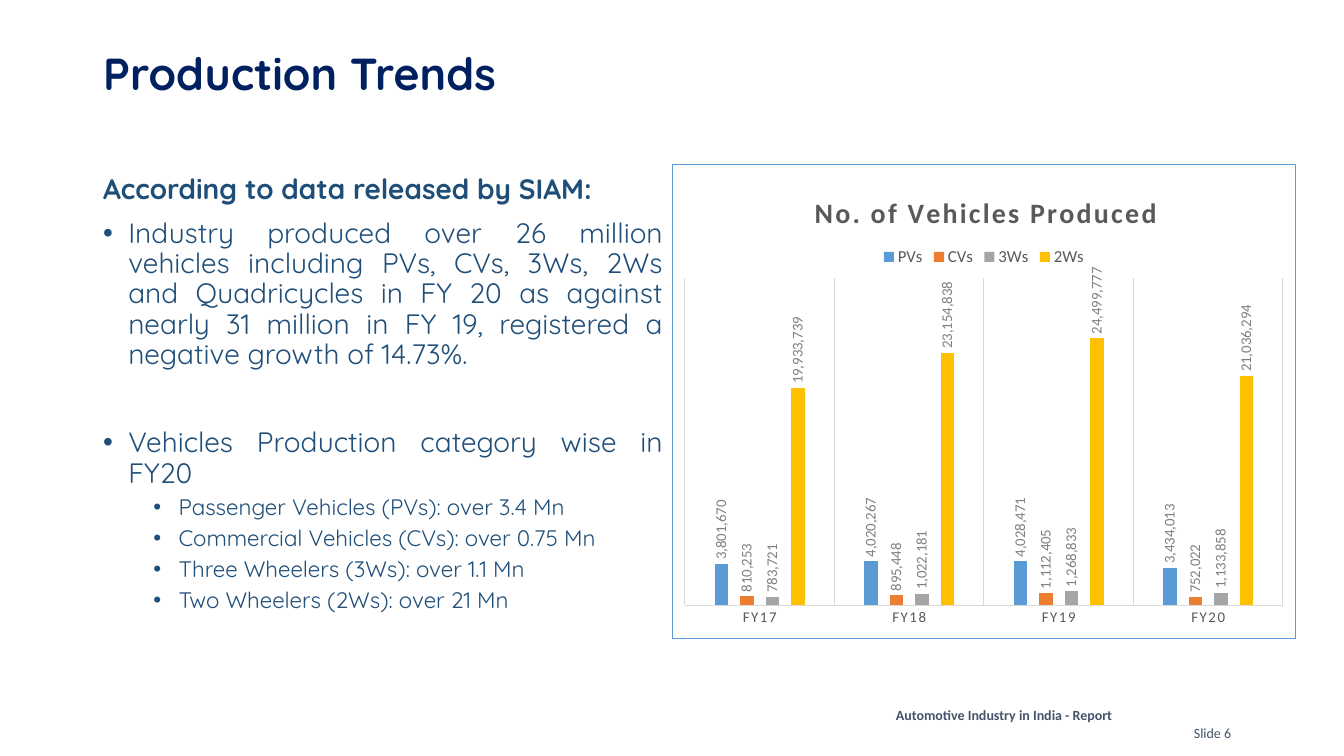
from dataclasses import dataclass

from lxml.etree import SubElement
from pptx import Presentation
from pptx.chart.data import CategoryChartData
from pptx.dml.color import RGBColor
from pptx.enum.chart import XL_CHART_TYPE as ChartType
from pptx.enum.chart import XL_LABEL_POSITION as LabelPosition
from pptx.enum.chart import XL_LEGEND_POSITION as LegendPosition
from pptx.enum.chart import XL_TICK_MARK as TickMark
from pptx.enum.text import MSO_ANCHOR as Anchor
from pptx.enum.text import MSO_AUTO_SIZE as AutoSize
from pptx.enum.text import PP_ALIGN as Align
from pptx.oxml import parse_xml
from pptx.oxml.ns import nsdecls, qn
from pptx.util import Emu, Inches, Pt

SCALE = 914400 / 100.8
NAVY, BLUE, SLATE = "002060", "1F4E79", "44546A"
GREY, LABEL_GREY, PALE, BORDER = "595959", "808080", "D9D9D9", "5B9BD5"


@dataclass(frozen=True)
class Area:
    left: int
    top: int
    width: int
    height: int


@dataclass(frozen=True)
class Item:
    text: str
    size: int = 20
    before: float = 10
    level: int = 0
    bullet: bool = True
    bold: bool = False


@dataclass(frozen=True)
class Series:
    name: str
    color: str
    values: tuple


@dataclass(frozen=True)
class Note:
    text: str
    area: Area
    align: Align
    bold: bool


CHART_AREA = Area(672, 164, 624, 475)
ITEMS = [
    Item("According to data released by SIAM:", before=0, bullet=False, bold=True),
    Item("Industry produced over 26 million vehicles including PVs, CVs, 3Ws, 2Ws "
         "and Quadricycles in FY 20 as against nearly 31 million in FY 19, "
         "registered a negative growth of 14.73%."),
    Item("Vehicles Production category wise in FY20", before=41.5),
    Item("Passenger Vehicles (PVs): over 3.4 Mn", 16, 5, 1),
    Item("Commercial Vehicles (CVs): over 0.75 Mn", 16, 5, 1),
    Item("Three Wheelers (3Ws): over 1.1 Mn", 16, 5, 1),
    Item("Two Wheelers (2Ws): over 21 Mn", 16, 5, 1),
]
YEARS = ["FY17", "FY18", "FY19", "FY20"]
SERIES = [
    Series("PVs", "5B9BD5", (3801670, 4020267, 4028471, 3434013)),
    Series("CVs", "ED7D31", (810253, 895448, 1112405, 752022)),
    Series("3Ws", "A5A5A5", (783721, 1022181, 1268833, 1133858)),
    Series("2Ws", "FFC000", (19933739, 23154838, 24499777, 21036294)),
]
NOTES = [
    Note("Automotive Industry in India - Report", Area(790, 702, 428, 27), Align.CENTER, True),
    Note("Slide 6", Area(1184, 720, 67, 27), Align.LEFT, False),
]


def px(length: float) -> Emu:
    return Emu(round(length * SCALE))


def rgb(color: str) -> RGBColor:
    return RGBColor.from_string(color)


def bounds(area: Area) -> tuple:
    return px(area.left), px(area.top), px(area.width), px(area.height)


def place(shape, area: Area) -> None:
    shape.left, shape.top, shape.width, shape.height = bounds(area)


def style(font, name: str, size: float, color: str, bold: bool = False) -> None:
    font.name, font.size, font.bold = name, Pt(size), bold
    font.color.rgb = rgb(color)


def add_run(para, text: str, name: str, size: float, color: str, bold: bool) -> None:
    span = para.add_run()
    span.text = text
    style(span.font, name, size, color, bold)


def add_title(slide) -> None:
    title = slide.shapes.title
    place(title, Area(93, 40, 1159, 73))
    frame = title.text_frame
    frame.auto_size, frame.vertical_anchor = AutoSize.NONE, Anchor.MIDDLE
    para = frame.paragraphs[0]
    para.alignment, para.line_spacing = Align.LEFT, 0.9
    add_run(para, "Production Trends", "Quicksand", 32, NAVY, True)


def set_bullet(para, item: Item) -> None:
    props = para._p.get_or_add_pPr()
    if not item.bullet:
        props.set("marL", "0")
        props.set("indent", "0")
        SubElement(props, qn("a:buNone"))
        return
    props.set("marL", str(Inches(0.25 + 0.5 * item.level)))
    props.set("indent", str(-Inches(0.25)))
    SubElement(SubElement(props, qn("a:buClr")), qn("a:srgbClr"), val=BLUE)
    SubElement(props, qn("a:buFont"), typeface="Arial")
    SubElement(props, qn("a:buChar"), char="•")


def add_body(slide) -> None:
    body = slide.placeholders[1]
    place(body, Area(93, 170, 580, 511))
    frame = body.text_frame
    frame.auto_size, frame.vertical_anchor = AutoSize.NONE, Anchor.TOP
    for index, item in enumerate(ITEMS):
        para = frame.add_paragraph() if index else frame.paragraphs[0]
        para.level = item.level
        para.alignment = Align.JUSTIFY if item.bullet else Align.LEFT
        para.line_spacing, para.space_before = 0.9, Pt(item.before)
        set_bullet(para, item)
        add_run(para, item.text, "Quicksand", item.size, BLUE, item.bold)


def add_note(slide, note: Note) -> None:
    frame = slide.shapes.add_textbox(*bounds(note.area)).text_frame
    frame.word_wrap = True
    para = frame.paragraphs[0]
    para.alignment = note.align
    add_run(para, note.text, "Calibri", 10, SLATE, note.bold)


def set_layout(part, position: int, inner: bool = False, **fractions: float) -> None:
    for old in part.findall(qn("c:layout")):
        part.remove(old)
    layout = parse_xml(f"<c:layout {nsdecls('c')}><c:manualLayout/></c:layout>")
    manual = layout[0]
    if inner:
        SubElement(manual, qn("c:layoutTarget"), val="inner")
    for key in ("xMode", "yMode"):
        SubElement(manual, qn(f"c:{key}"), val="edge")
    for key, value in fractions.items():
        SubElement(manual, qn(f"c:{key}"), val=str(value))
    part.insert(position, layout)


def set_spacing(part, tag: str, spacing: int) -> None:
    for props in part.iter(qn(tag)):
        props.set("spc", str(spacing))


def style_series(series, color: str) -> None:
    series.format.fill.solid()
    series.format.fill.fore_color.rgb = rgb(color)
    series.invert_if_negative = False
    labels = series.data_labels
    labels.show_value, labels.position = True, LabelPosition.OUTSIDE_END
    labels.number_format, labels.number_format_is_linked = "#,##0", False
    style(labels.font, "Calibri", 10.6, LABEL_GREY)
    for frame in series._element.iter(qn("a:bodyPr")):
        frame.set("rot", "-5400000")
        frame.set("vert", "horz")


def style_axes(chart) -> None:
    years, counts = chart.category_axis, chart.value_axis
    years.major_tick_mark = years.minor_tick_mark = TickMark.NONE
    years.has_major_gridlines = True
    for line in (years.format.line, years.major_gridlines.format.line):
        line.color.rgb, line.width = rgb(PALE), Pt(0.75)
    style(years.tick_labels.font, "Calibri", 10.6, GREY)
    counts.minimum_scale, counts.maximum_scale = 0, 30000000
    counts.has_major_gridlines = counts.visible = False


def add_vehicle_chart(slide) -> None:
    data = CategoryChartData(number_format="#,##0")
    data.categories = YEARS
    for entry in SERIES:
        data.add_series(entry.name, entry.values)
    chart = slide.shapes.add_chart(
        ChartType.COLUMN_CLUSTERED, *bounds(CHART_AREA), data).chart
    style(chart.font, "Calibri", 10, "000000")
    plot = chart.plots[0]
    plot.gap_width, plot.overlap, plot.vary_by_categories = 444, -90, False
    for series, entry in zip(plot.series, SERIES):
        style_series(series, entry.color)
    style_axes(chart)
    chart.has_title = chart.has_legend = True
    add_run(chart.chart_title.text_frame.paragraphs[0],
            "No. of Vehicles Produced", "Calibri", 20, GREY, True)
    chart.legend.position, chart.legend.include_in_layout = LegendPosition.TOP, False
    style(chart.legend.font, "Calibri", 12, GREY)

    root = chart._chartSpace
    title, legend, plot_area, axis = (
        root.find(f".//{qn(tag)}") for tag in ("c:title", "c:legend", "c:plotArea", "c:catAx"))
    set_spacing(title, "a:rPr", 150)
    set_spacing(axis, "a:defRPr", 120)
    set_layout(title, 1, x=0.22, y=0.05)
    set_layout(legend, 1, x=0.33, y=0.17, w=0.34, h=0.05)
    set_layout(plot_area, 0, True, x=0.02, y=0.24, w=0.96, h=0.69)
    root.find(qn("c:chart")).addnext(parse_xml(
        f'<c:spPr {nsdecls("c", "a")}><a:noFill/><a:ln w="{Pt(0.75)}"><a:solidFill>'
        f'<a:srgbClr val="{BORDER}"/></a:solidFill></a:ln></c:spPr>'))


def main() -> None:
    deck = Presentation()
    deck.slide_width, deck.slide_height = px(1344), px(756)
    page = deck.slides.add_slide(deck.slide_layouts[1])
    add_title(page)
    add_body(page)
    add_vehicle_chart(page)
    for note in NOTES:
        add_note(page, note)
    deck.save("out.pptx")


if __name__ == "__main__":
    main()
